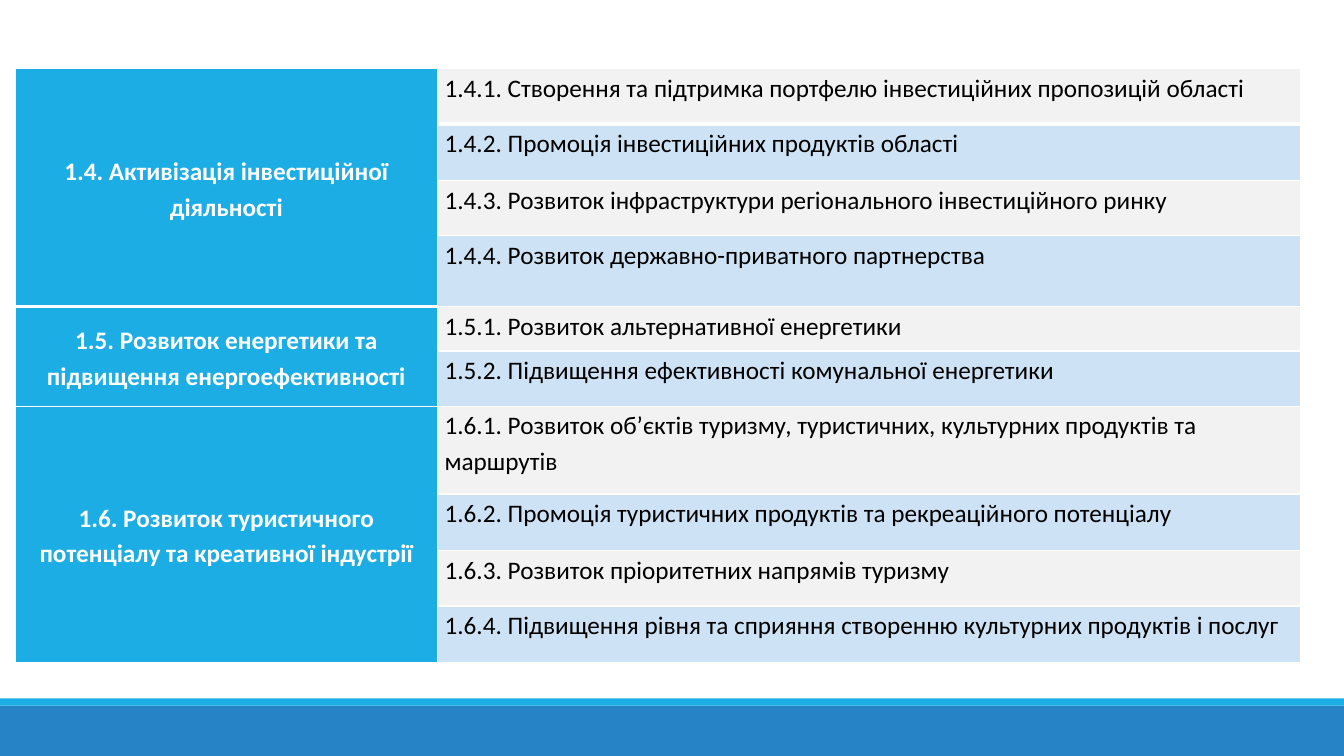
from lxml.etree import SubElement
from pptx import Presentation
from pptx.dml.color import RGBColor
from pptx.enum.shapes import MSO_SHAPE as Shape
from pptx.enum.text import MSO_ANCHOR as Anchor, PP_ALIGN as Align
from pptx.oxml.ns import qn
from pptx.util import Inches, Pt

GOALS = [
    ("1.4. Активізація інвестиційної діяльності", [
        "1.4.1. Створення та підтримка портфелю інвестиційних пропозицій області",
        "1.4.2. Промоція інвестиційних продуктів області",
        "1.4.3. Розвиток інфраструктури регіонального інвестиційного ринку",
        "1.4.4. Розвиток державно-приватного партнерства",
    ]),
    ("1.5. Розвиток енергетики та підвищення енергоефективності", [
        "1.5.1. Розвиток альтернативної енергетики",
        "1.5.2. Підвищення ефективності комунальної енергетики",
    ]),
    ("1.6. Розвиток туристичного потенціалу та креативної індустрії", [
        "1.6.1. Розвиток об’єктів туризму, туристичних, культурних продуктів та маршрутів",
        "1.6.2. Промоція туристичних продуктів та рекреаційного потенціалу",
        "1.6.3. Розвиток пріоритетних напрямів туризму",
        "1.6.4. Підвищення рівня та сприяння створенню культурних продуктів і послуг",
    ]),
]
COLUMN_WIDTHS = [4.19, 8.56]
ROW_HEIGHTS = [0.55, 0.56, 0.55, 0.68, 0.44, 0.55, 0.87, 0.56, 0.55, 0.56]


def color(value):
    return RGBColor.from_string(value)


def apply(target, values):
    for name, value in values.items():
        setattr(target, name, value)


class GoalSlide:
    accent, blue, white, black = "1CADE4", "2683C6", "FFFFFF", "000000"
    bands = ["F2F2F2", "CDE3F5"]
    insets = {"margin_left": Inches(0.07), "margin_right": Inches(0.07),
              "margin_top": 0, "margin_bottom": 0}
    font = {"name": "Calibri", "size": Pt(18)}

    def __init__(self, page):
        self.page = page

    def bar(self, top, height, fill):
        box = self.page.shapes.add_shape(
            Shape.RECTANGLE, 0, Inches(top), Inches(13.33), Inches(height))
        box.shadow.inherit = False
        box.fill.solid()
        box.fill.fore_color.rgb = color(fill)
        box.line.fill.background()

    def borders(self, cell, bottom):
        properties = cell._tc.get_or_add_tcPr()
        for side, width in {"L": 1, "R": 1, "T": 1, "B": bottom}.items():
            line = SubElement(properties, qn(f"a:ln{side}"), w=str(Pt(width)))
            fill = SubElement(line, qn("a:solidFill"))
            SubElement(fill, qn("a:srgbClr"), val=self.white)

    def style_cell(self, cell, fill, bottom):
        self.borders(cell, bottom)
        cell.fill.solid()
        cell.fill.fore_color.rgb = color(fill)
        apply(cell, self.insets)

    def cell_text(self, cell, text, ink, bold, align, anchor):
        cell.vertical_anchor = anchor
        para = cell.text_frame.paragraphs[0]
        apply(para, {"alignment": align, "line_spacing": 1.15})
        span = para.add_run()
        span.text = text
        apply(span.font, {**self.font, "bold": bold})
        span.font.color.rgb = color(ink)

    def goal_table(self, left, top, goals):
        table = self.page.shapes.add_table(
            len(ROW_HEIGHTS), len(COLUMN_WIDTHS), Inches(left), Inches(top),
            Inches(sum(COLUMN_WIDTHS)), Inches(sum(ROW_HEIGHTS))).table
        for column, width in zip(table.columns, COLUMN_WIDTHS):
            column.width = Inches(width)
        for row, height in zip(table.rows, ROW_HEIGHTS):
            row.height = Inches(height)
        index = 0
        for goal, tasks in goals:
            heading = table.cell(index, 0)
            heading.merge(table.cell(index + len(tasks) - 1, 0))
            self.cell_text(heading, goal, self.white, True, Align.CENTER, Anchor.MIDDLE)
            for task in tasks:
                bottom = 3 if index == 0 else 1
                self.style_cell(table.cell(index, 0), self.accent, bottom)
                cell = table.cell(index, 1)
                self.style_cell(cell, self.bands[index % 2], bottom)
                self.cell_text(cell, task, self.black, False, Align.LEFT, Anchor.TOP)
                index += 1


def main():
    deck = Presentation()
    apply(deck, {"slide_width": Inches(13.33), "slide_height": Inches(7.5)})
    slide = GoalSlide(deck.slides.add_slide(deck.slide_layouts[6]))
    slide.bar(7, 0.5, slide.blue)
    slide.bar(6.93, 0.07, slide.accent)
    slide.goal_table(0.15, 0.68, GOALS)
    deck.save("out.pptx")


if __name__ == "__main__":
    main()
